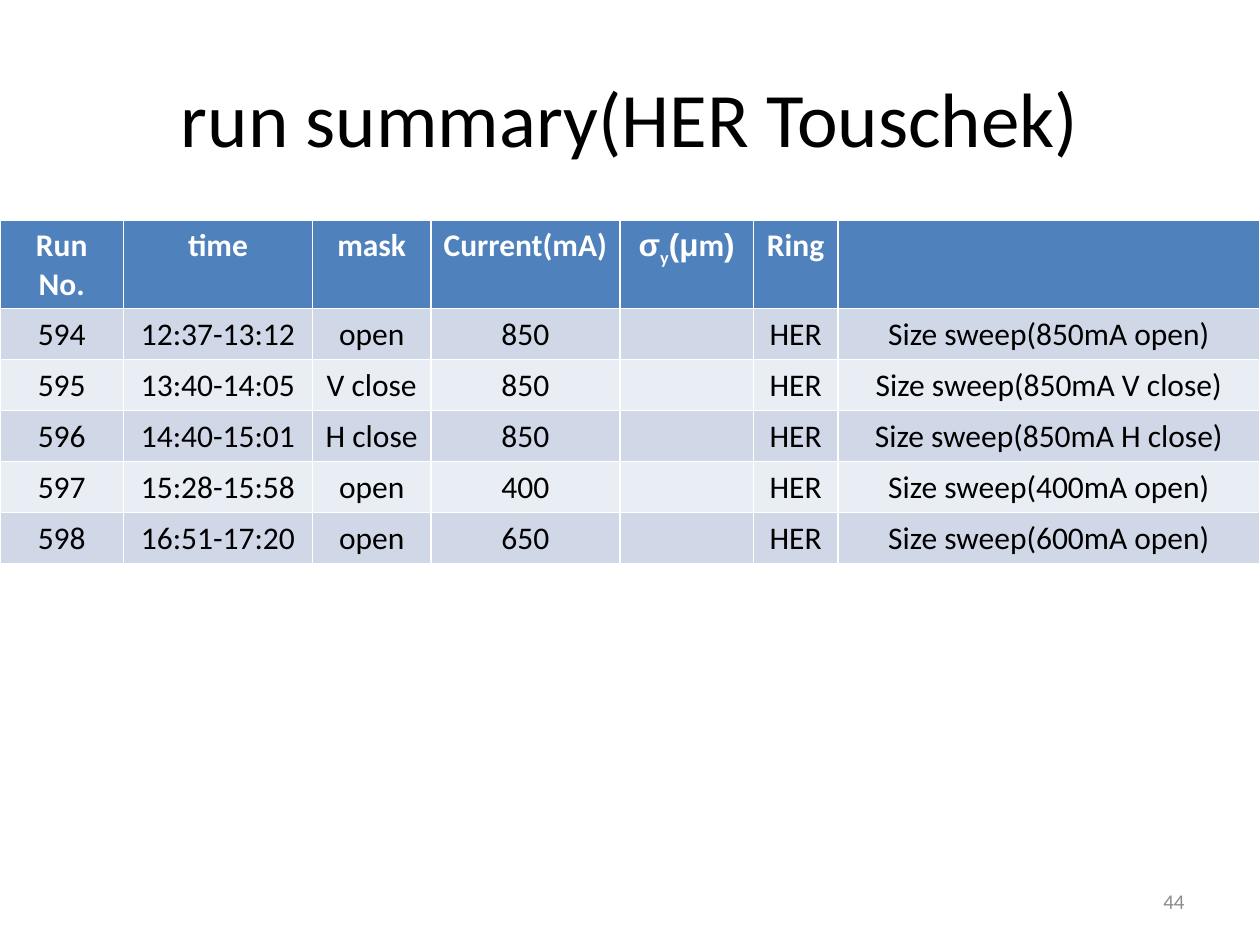
import pptx
import pptx.util
import pptx.dml.color
import pptx.enum.text

Inch, Pt = pptx.util.Inches, pptx.util.Pt
Align = pptx.enum.text.PP_ALIGN
Mid = pptx.enum.text.MSO_ANCHOR.MIDDLE

HUES = {"ink": "000000", "white": "FFFFFF", "gray": "8C8C8C",
        "head": "4F81BD", "dark": "D0D8E8", "light": "E9EDF4"}
WIDE, HIGH = 10, 7.5

# Text formats
TITLE = {"size": Pt(44), "name": "Calibri", "color": "ink"}
PAGE = {"size": Pt(12), "name": "Calibri", "color": "gray"}
HEAD = {"size": Pt(18), "name": "Calibri", "bold": True, "color": "white"}
BODY = {"size": Pt(18), "name": "Calibri", "bold": False, "color": "ink"}
GREEK = HEAD | {"name": "Arial"}
SUB = HEAD | {"base": "-25000"}

# Table content: a cell is a string or a list of (text, format) runs
COLS = [0.98, 1.5, 0.94, 1.5, 1.06, 0.67, 3.35]
SIGMA = [("σ", GREEK), ("y", SUB), ("(μ", GREEK), ("m", HEAD), (")", GREEK)]
LABELS = ["Run No.", "time", "mask", "Current(mA)", SIGMA, "Ring", ""]
RUNS = [
    ("594", "12:37-13:12", "open", "850", "850mA open"),
    ("595", "13:40-14:05", "V close", "850", "850mA V close"),
    ("596", "14:40-15:01", "H close", "850", "850mA H close"),
    ("597", "15:28-15:58", "open", "400", "400mA open"),
    ("598", "16:51-17:20", "open", "650", "600mA open"),
]


def hue(name):
    return pptx.dml.color.RGBColor.from_string(HUES[name])


def write(frame, runs, align):
    para = frame.paragraphs[0]
    para.alignment = align
    for text, form in runs:
        run = para.add_run()
        run.text = text
        for key, value in form.items():
            if key == "color":
                run.font.color.rgb = hue(value)
            elif key == "base":
                run._r.get_or_add_rPr().set("baseline", value)
            else:
                setattr(run.font, key, value)


def place(shape, box):
    for key, value in zip(("left", "top", "width", "height"), box):
        setattr(shape, key, Inch(value))


def add_title(slide, box):
    title = slide.shapes.title
    place(title, box)
    title.text_frame.vertical_anchor = Mid
    write(title.text_frame, [("run summary(HER Touschek)", TITLE)],
          Align.CENTER)


def add_page(slide, box):
    frame = slide.shapes.add_textbox(*map(Inch, box)).text_frame
    frame.word_wrap = True
    frame.vertical_anchor = Mid
    write(frame, [("44", PAGE)], Align.RIGHT)


def add_runs(slide, box):
    rows = [LABELS] + [[num, time, mask, amps, "", "HER", f"Size sweep({note})"]
                       for num, time, mask, amps, note in RUNS]
    # The default table style draws the white rules
    table = slide.shapes.add_table(len(rows), len(COLS),
                                   *map(Inch, box)).table
    for col, share in zip(table.columns, COLS):
        col.width = Inch(box[2] * share / sum(COLS))
    for i, row in enumerate(rows):
        form = BODY if i else HEAD
        fill = ("light", "dark")[i % 2] if i else "head"
        for j, item in enumerate(row):
            cell = table.cell(i, j)
            cell.fill.solid()
            cell.fill.fore_color.rgb = hue(fill)
            if item:
                runs = [(item, form)] if isinstance(item, str) else item
                write(cell.text_frame, runs, Align.CENTER)


def main():
    deck = pptx.Presentation()
    deck.slide_width, deck.slide_height = Inch(WIDE), Inch(HIGH)
    slide = deck.slides.add_slide(deck.slide_layouts[5])
    add_title(slide, (0.05 * WIDE, 0.04 * HIGH, 0.9 * WIDE, HIGH / 6))
    add_page(slide, (7.17, 6.95, 2.33, 0.4))
    add_runs(slide, (0, 1.75, WIDE, 2.43))
    deck.save("out.pptx")


if __name__ == "__main__":
    main()
